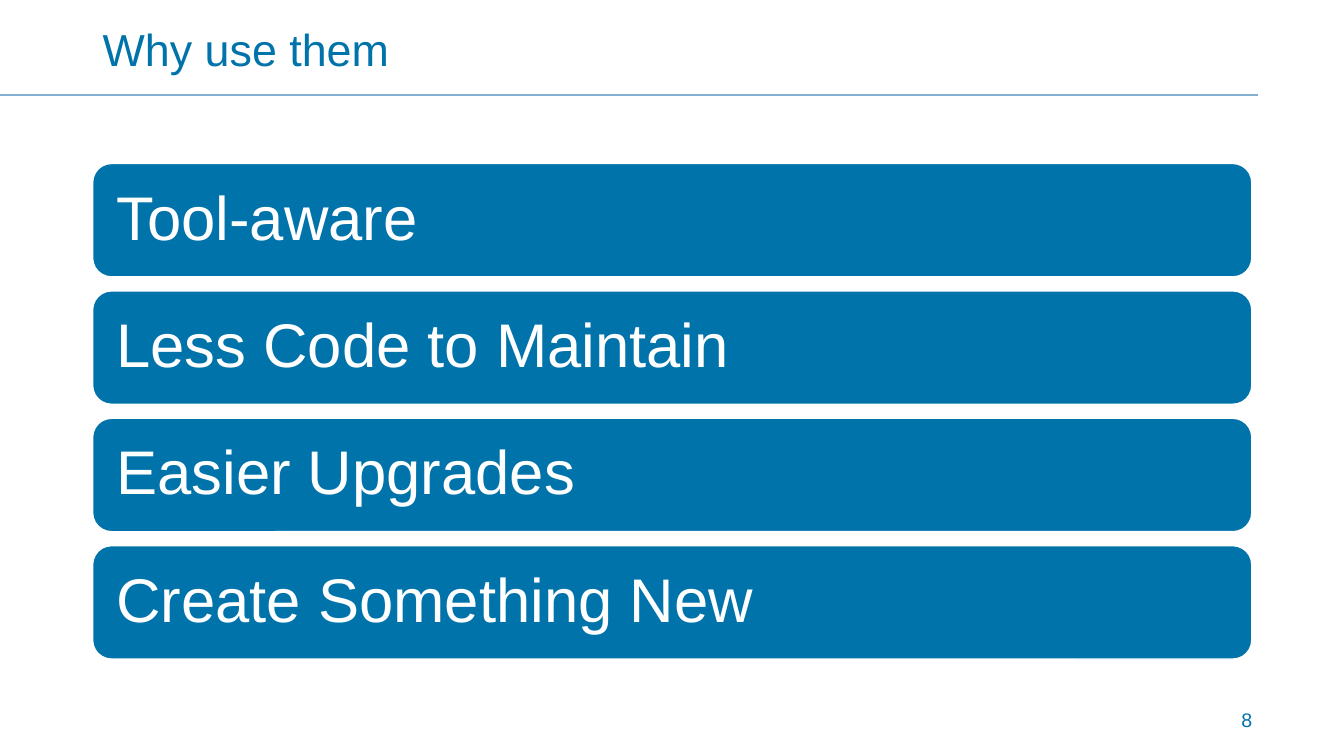
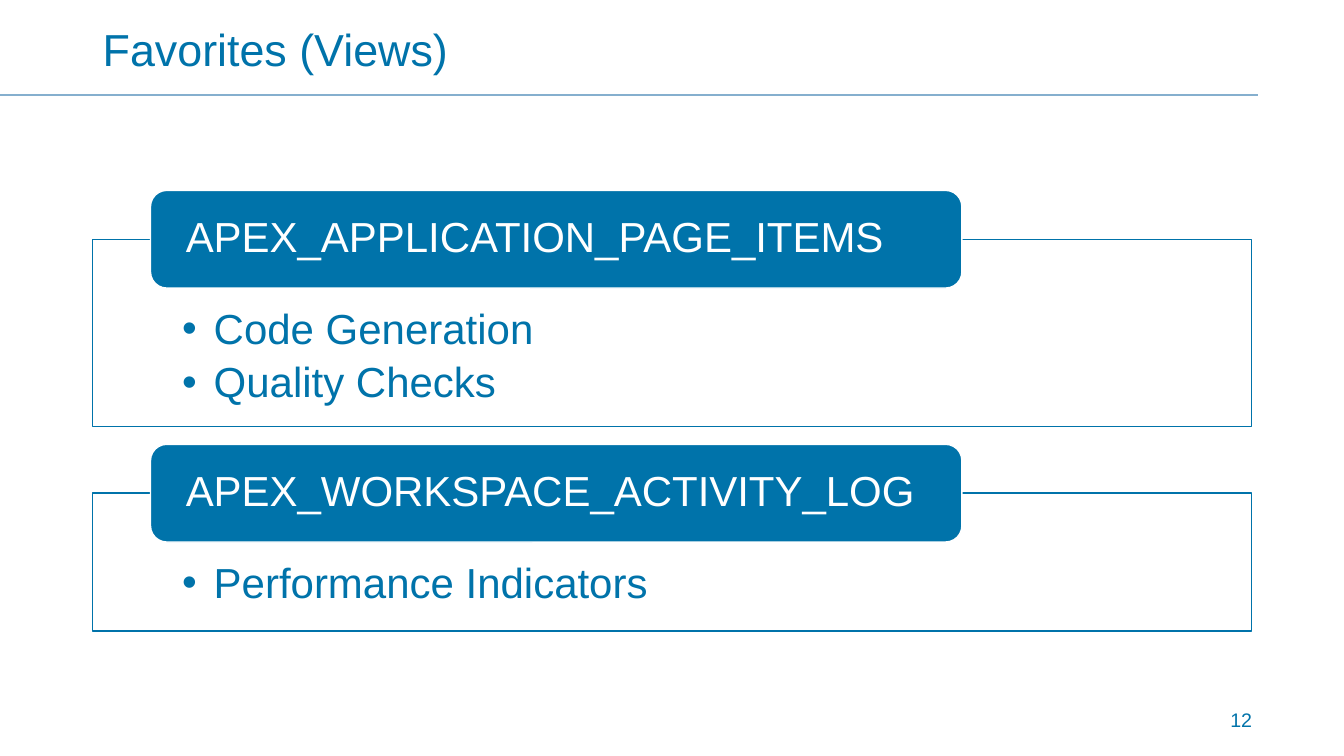
from dataclasses import dataclass

from lxml import etree
from pptx import Presentation
from pptx.dml.color import RGBColor
from pptx.enum.shapes import MSO_CONNECTOR, MSO_SHAPE
from pptx.enum.text import MSO_ANCHOR, MSO_AUTO_SIZE, PP_ALIGN
from pptx.oxml.ns import qn
from pptx.slide import Slide
from pptx.text.text import TextFrame
from pptx.util import Pt

RECT, ROUND = MSO_SHAPE.RECTANGLE, MSO_SHAPE.ROUNDED_RECTANGLE
STRAIGHT = MSO_CONNECTOR.STRAIGHT
TOP, MIDDLE = MSO_ANCHOR.TOP, MSO_ANCHOR.MIDDLE
LEFT, RIGHT = PP_ALIGN.LEFT, PP_ALIGN.RIGHT
TITLE_ONLY = 5


@dataclass(frozen=True)
class Theme:
    font: str = "Arial"
    blue: RGBColor = RGBColor(0x00, 0x73, 0xAA)
    pale: RGBColor = RGBColor(0x85, 0xAF, 0xCE)
    white: RGBColor = RGBColor(0xFF, 0xFF, 0xFF)
    title: int = 32
    bar: int = 44
    body: int = 30
    page: int = 14


@dataclass(frozen=True)
class Box:
    left: float
    top: float
    width: float
    height: float

    def place(self) -> tuple[Pt, Pt, Pt, Pt]:
        return Pt(self.left), Pt(self.top), Pt(self.width), Pt(self.height)


@dataclass(frozen=True)
class View:
    name: str
    uses: tuple[str, ...]


THEME = Theme()
EDGE, SPAN = 66.2, 828

# Slide content
BARS = ("Tool-aware", "Less Code to Maintain", "Easier Upgrades",
        "Create Something New")
VIEWS = (
    View("APEX_APPLICATION_PAGE_ITEMS", ("Code Generation", "Quality Checks")),
    View("APEX_WORKSPACE_ACTIVITY_LOG", ("Performance Indicators",)),
)


def write(frame: TextFrame, lines: tuple[str, ...], size: int, color: RGBColor,
          pads: tuple[float, float, float, float] = (7.2, 3.6, 7.2, 3.6),
          anchor: MSO_ANCHOR = MIDDLE, align: PP_ALIGN = LEFT,
          bullet: bool = False) -> None:
    """Fill a frame; pads run left, top, right, bottom."""
    frame.word_wrap = True
    frame.auto_size = MSO_AUTO_SIZE.NONE
    frame.vertical_anchor = anchor
    (frame.margin_left, frame.margin_top,
     frame.margin_right, frame.margin_bottom) = map(Pt, pads)
    for i, line in enumerate(lines):
        para = frame.paragraphs[0] if i == 0 else frame.add_paragraph()
        para.text = line
        para.alignment = align
        para.line_spacing = 0.9
        if bullet:
            props = para._p.get_or_add_pPr()
            props.set("marL", str(Pt(22.5)))
            props.set("indent", str(Pt(-22.5)))
            etree.SubElement(props, qn("a:buFont"), typeface=THEME.font)
            etree.SubElement(props, qn("a:buChar"), char="•")
            para.space_after = Pt(6)
        para.font.name = THEME.font
        para.font.size = Pt(size)
        para.font.color.rgb = color


def panel(slide: Slide, kind: MSO_SHAPE, box: Box, fill: RGBColor,
          line: RGBColor) -> TextFrame:
    shape = slide.shapes.add_shape(kind, *box.place())
    shape.shadow.inherit = False
    shape.fill.solid()
    shape.fill.fore_color.rgb = fill
    shape.line.color.rgb = line
    shape.line.width = Pt(1)
    return shape.text_frame


def start(deck: Presentation, title: str, page: int) -> Slide:
    """Add a slide with its title, rule and page number."""
    slide = deck.slides.add_slide(deck.slide_layouts[TITLE_ONLY])
    head = slide.shapes.title
    head.left, head.top, head.width, head.height = Box(
        EDGE, 10.8, SPAN, 53.3).place()
    write(head.text_frame, (title,), THEME.title, THEME.blue)

    rule = slide.shapes.add_connector(STRAIGHT, 0, Pt(67.7), Pt(898.6), Pt(67.7))
    rule.line.color.rgb = THEME.pale
    rule.line.width = Pt(1.5)
    etree.SubElement(rule._element.spPr, qn("a:effectLst"))

    foot = slide.shapes.add_textbox(*Box(758.9, 504, 142.6, 24.5).place())
    write(foot.text_frame, (str(page),), THEME.page, THEME.blue,
          anchor=TOP, align=RIGHT)
    return slide


def draw_bars(slide: Slide) -> None:
    for i, text in enumerate(BARS):
        box = Box(EDGE, 116.8 + 91 * i, SPAN, 81)
        frame = panel(slide, ROUND, box, THEME.blue, THEME.white)
        write(frame, (text,), THEME.bar, THEME.white, (13, 13, 13, 13))


def draw_views(slide: Slide) -> None:
    top, tag = 136, 69.8
    for view in VIEWS:
        # Outlined list, then the name tag across its top edge
        box = Box(EDGE, top + tag / 2, SPAN, 63.3 + 35.3 * len(view.uses))
        frame = panel(slide, RECT, box, THEME.white, THEME.blue)
        write(frame, view.uses, THEME.body, THEME.blue,
              (64, 49, 64, 16.5), TOP, bullet=True)
        frame = panel(slide, ROUND, Box(107.5, top, 579.6, tag),
                      THEME.blue, THEME.white)
        write(frame, (view.name,), THEME.body, THEME.white, (21.8, 0, 21.8, 0))
        top = box.top + box.height + 12.6


def main() -> None:
    deck = Presentation()
    deck.slide_width, deck.slide_height = Pt(960), Pt(540)
    draw_bars(start(deck, "Why use them", 8))
    draw_views(start(deck, "Favorites (Views)", 12))
    deck.save("out.pptx")


if __name__ == "__main__":
    main()
